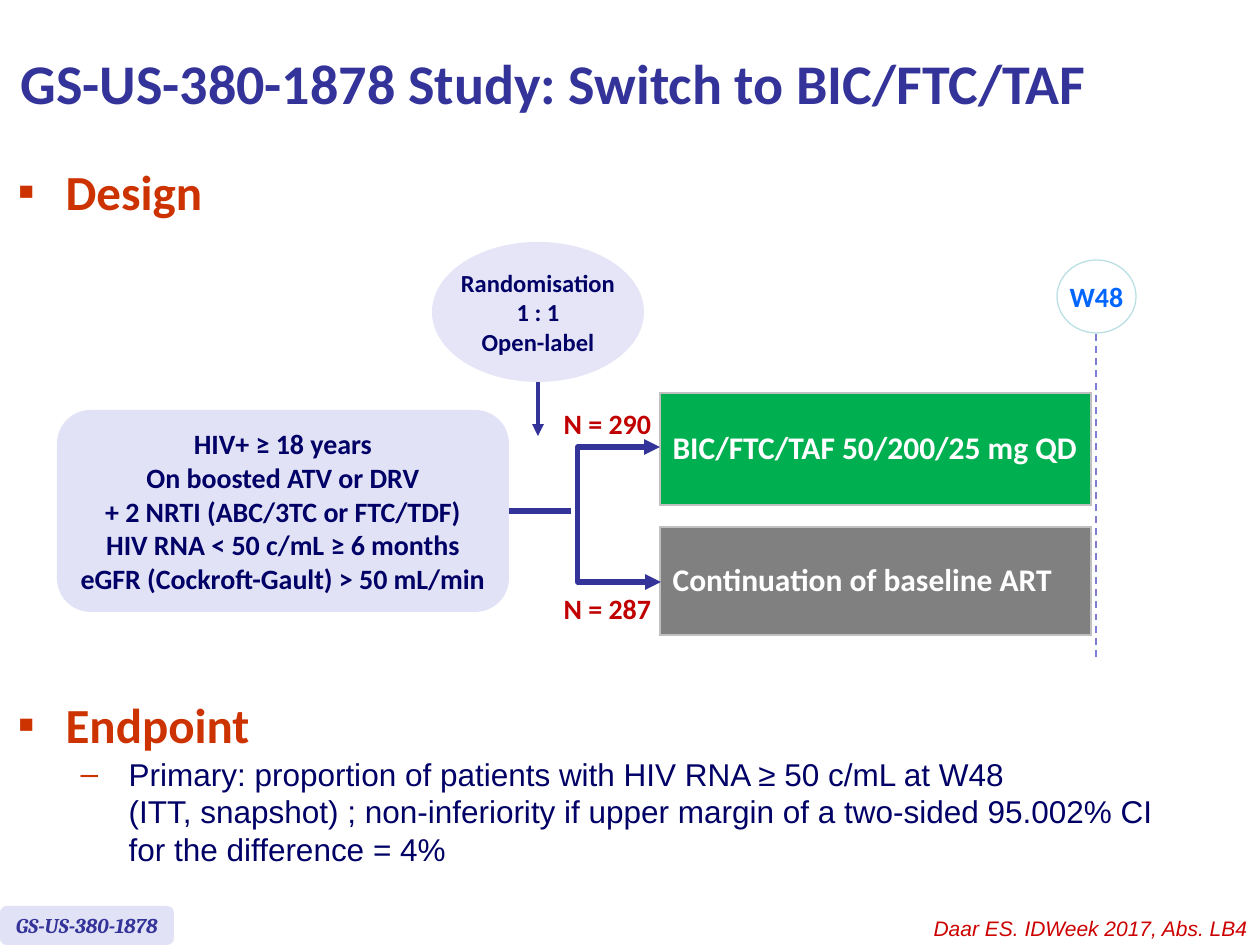
import dataclasses

import lxml.etree
import pptx
import pptx.dml.color
import pptx.enum.dml
import pptx.enum.shapes
import pptx.enum.text
import pptx.oxml
import pptx.oxml.ns
import pptx.util

SCALE = 914400 / 126
SHAPE = pptx.enum.shapes.MSO_SHAPE
LINK = pptx.enum.shapes.MSO_CONNECTOR
ALIGN = pptx.enum.text.PP_ALIGN
ANCHOR = pptx.enum.text.MSO_ANCHOR


@dataclasses.dataclass(frozen=True)
class Theme:
    navy: str = "000066"
    indigo: str = "333399"
    rust: str = "CC3300"
    red: str = "C00000"
    cite: str = "CC0000"
    blue: str = "0066FF"
    pale: str = "E2E2F6"
    lilac: str = "E5E5F7"
    dash: str = "7E7ED4"
    ring: str = "BBE0E3"
    white: str = "FFFFFF"
    green: str = "00B050"
    gray: str = "808080"
    edge: str = "C0C0C0"
    title: int = 32
    head: int = 28
    body: int = 18
    label: int = 16
    small: int = 14
    foot: int = 12


THEME = Theme()


def px(count):
    return pptx.util.Emu(int(count * SCALE))


def rgb(code):
    return pptx.dml.color.RGBColor.from_string(code)


def add_xml(parent, tag, **attrs):
    return lxml.etree.SubElement(parent, pptx.oxml.ns.qn("a:" + tag), **attrs)


def place(item, left, top, width, height):
    item.left, item.top = px(left), px(top)
    item.width, item.height = px(width), px(height)


def style(para, size, color, face="Calibri", bold=True, slant=False, align=ALIGN.CENTER):
    para.alignment = align
    for run in para.runs:
        font = run.font
        font.name, font.size = face, pptx.util.Pt(size)
        font.bold, font.italic = bold, slant
        font.color.rgb = rgb(color)


def write(frame, text, size, color, wrap=False, **looks):
    frame.text = text
    frame.word_wrap = wrap
    for para in frame.paragraphs:
        style(para, size, color, **looks)


def add_node(slide, kind, box, fill, text, size, color, line=None, **looks):
    node = slide.shapes.add_shape(kind, *map(px, box))
    node.shadow.inherit = False
    node.fill.solid()
    node.fill.fore_color.rgb = rgb(fill)
    if line:
        node.line.color.rgb = rgb(line)
        node.line.width = pptx.util.Pt(0.75)
    else:
        node.line.fill.background()
    write(node.text_frame, text, size, color, **looks)
    node.text_frame.vertical_anchor = ANCHOR.MIDDLE
    return node


def add_label(slide, box, text, size, color, **looks):
    label = slide.shapes.add_textbox(*map(px, box))
    write(label.text_frame, text, size, color, **looks)


def add_link(slide, start, end, color, width, kind=LINK.STRAIGHT, ends=()):
    """Draw a connector; ends names the arrowheads, headEnd before tailEnd."""
    link = slide.shapes.add_connector(kind, *map(px, (*start, *end)))
    link.line.color.rgb = rgb(color)
    link.line.width = pptx.util.Pt(width)
    for tag in ends:
        add_xml(link.line._get_or_add_ln(), tag, type="triangle")
    add_xml(link._element.spPr, "effectLst")
    return link


def add_title(title, box):
    place(title, *box)
    write(title.text_frame, "GS-US-380-1878 Study: Switch to BIC/FTC/TAF",
          THEME.title, THEME.indigo, wrap=True, align=ALIGN.LEFT)
    title.text_frame.vertical_anchor = ANCHOR.MIDDLE


def add_list(holder, box, head, detail=None):
    """Fill a body placeholder with a heading and an optional point below it."""
    place(holder, *box)
    frame = holder.text_frame
    frame.word_wrap = True
    frame.auto_size = pptx.enum.text.MSO_AUTO_SIZE.NONE
    frame.vertical_anchor = ANCHOR.TOP
    rows = [(head, "▪", 48, THEME.head, THEME.rust, "Calibri", True)]
    if detail:
        rows.append((detail, "–", 111, THEME.body, THEME.navy, "Arial", False))
    for level, (text, mark, indent, size, color, face, bold) in enumerate(rows):
        para = frame.add_paragraph() if level else frame.paragraphs[0]
        para.text = text
        para.level = level
        props = para._p.get_or_add_pPr()
        props.set("marL", str(px(indent)))
        props.set("indent", str(px(-48)))
        add_xml(add_xml(props, "buClr"), "srgbClr", val=THEME.rust)
        add_xml(props, "buFont", typeface="Arial")
        add_xml(props, "buChar", char=mark)
        para.space_before = pptx.util.Pt(0.8 if level else 0)
        style(para, size, color, face, bold, align=ALIGN.LEFT)


def add_arm(slide, box, text, fill):
    """Place one study arm as a table of a single cell."""
    table = slide.shapes.add_table(1, 1, *map(px, box)).table
    table.first_row = table.horz_banding = False
    cell = table.cell(0, 0)
    write(cell.text_frame, text, THEME.body, THEME.white, wrap=True, align=ALIGN.LEFT)
    cell.vertical_anchor = ANCHOR.MIDDLE
    props = cell._tc.get_or_add_tcPr()
    for side in ("lnL", "lnR", "lnT", "lnB"):
        line = add_xml(props, side, w=str(pptx.util.Pt(1)))
        add_xml(add_xml(line, "solidFill"), "srgbClr", val=THEME.edge)
    cell.fill.solid()
    cell.fill.fore_color.rgb = rgb(fill)


def add_design(slide, left, top):
    """Draw the trial flow with its top left corner at the given point."""
    def at(x, y, *size):
        return (left + x, top + y, *size)

    group = add_node(
        slide, SHAPE.ROUNDED_RECTANGLE, at(0, 168, 452, 202), THEME.pale,
        "HIV+ ≥ 18 years\nOn boosted ATV or DRV\n+ 2 NRTI (ABC/3TC or FTC/TDF)\n"
        "HIV RNA < 50 c/mL ≥ 6 months\neGFR (Cockroft-Gault) > 50 mL/min",
        THEME.label, THEME.navy)
    stem = add_link(slide, at(452, 269), at(514, 269), THEME.indigo, 3)
    stem.begin_connect(group, 3)

    add_node(slide, SHAPE.OVAL, at(375, 0, 212, 140), THEME.lilac,
             "Randomisation\n1 : 1\nOpen-label", THEME.small, THEME.navy)
    add_link(slide, at(481, 140), at(481, 194), THEME.indigo, 2.25, ends=["tailEnd"])

    add_arm(slide, at(603, 151, 431, 112), "BIC/FTC/TAF 50/200/25 mg QD", THEME.green)
    add_arm(slide, at(603, 285, 431, 108), "Continuation of baseline ART", THEME.gray)
    fork = add_link(slide, at(603, 205), at(604, 340), THEME.indigo, 3,
                    LINK.ELBOW, ["headEnd", "tailEnd"])
    # The elbow turns 83 px left of a fork that is 1 px wide.
    fork._element.spPr.prstGeom.get_or_add_avLst()
    add_xml(fork._element.spPr.prstGeom.avLst, "gd", name="adj1", fmla="val -8300000")
    for y, count in ((158, 290), (343, 287)):
        add_label(slide, at(494, y, 113, 47), f"N = {count}", THEME.label, THEME.red)

    add_node(slide, SHAPE.OVAL, at(1000, 18, 79, 73), THEME.white, "W48",
             THEME.label, THEME.blue, line=THEME.ring)
    week = add_link(slide, at(1039, 92), at(1039, 420), THEME.dash, 1)
    week.line.dash_style = pptx.enum.dml.MSO_LINE.DASH


def add_foot(slide, left, top, width):
    add_node(slide, SHAPE.ROUNDED_RECTANGLE, (left, top, 174, 39), THEME.pale,
             "GS-US-380-1878", THEME.foot, THEME.indigo, face="Cambria", slant=True)
    add_label(slide, (left + width - 585, top + 3, 585, 37),
              "Daar ES. IDWeek 2017, Abs. LB4", THEME.foot, THEME.cite, wrap=True,
              face="Arial", bold=False, slant=True, align=ALIGN.RIGHT)


def main():
    deck = pptx.Presentation()
    deck.slide_width, deck.slide_height = px(1260), px(945)
    slide = deck.slides.add_slide(deck.slide_layouts.get_by_name("Two Content"))
    title, design, goal = slide.placeholders
    add_title(title, (8, 6, 1129, 152))
    add_list(design, (5, 155, 249, 79), "Design")
    add_list(goal, (5, 688, 1203, 200), "Endpoint",
             "Primary: proportion of patients with HIV RNA ≥ 50 c/mL at W48\v"
             "(ITT, snapshot) ; non-inferiority if upper margin of a two-sided 95.002% CI\v"
             "for the difference = 4%")
    add_design(slide, 57, 242)
    add_foot(slide, 0, 906, 1260)
    deck.save("out.pptx")


if __name__ == "__main__":
    main()
